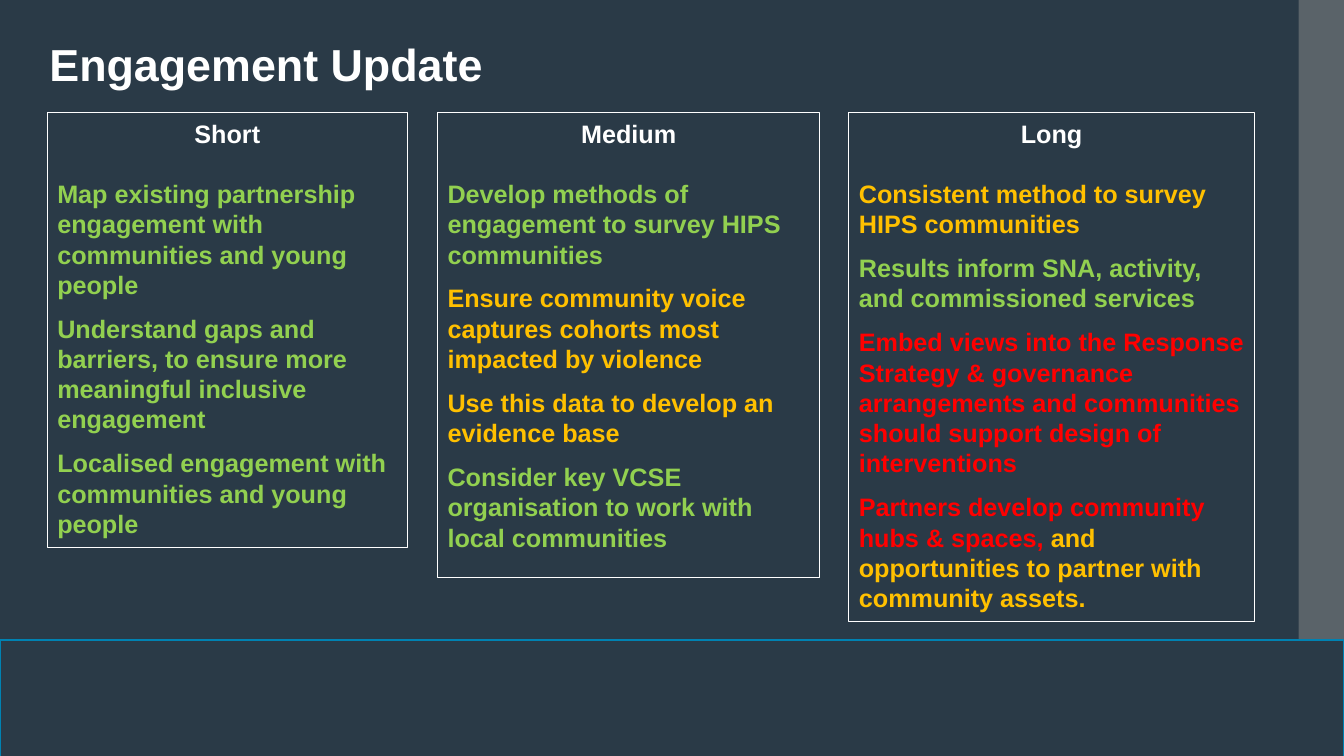
from dataclasses import dataclass

from lxml import etree
from pptx import Presentation
from pptx.dml.color import RGBColor
from pptx.enum.shapes import MSO_SHAPE
from pptx.enum.text import MSO_ANCHOR, PP_ALIGN
from pptx.oxml.ns import qn
from pptx.util import Inches, Pt

RECT = MSO_SHAPE.RECTANGLE
TOP = MSO_ANCHOR.TOP
LEFT, CENTER = PP_ALIGN.LEFT, PP_ALIGN.CENTER

NAVY = RGBColor(0x2A, 0x3A, 0x47)
GREY = RGBColor(0x8B, 0x8C, 0x8C)
BLUE = RGBColor(0x00, 0x82, 0xB2)
WHITE = RGBColor(0xFF, 0xFF, 0xFF)
GREEN = RGBColor(0x92, 0xD0, 0x50)
AMBER = RGBColor(0xFF, 0xC0, 0x00)
RED = RGBColor(0xFF, 0x00, 0x00)

FONT = "Arial"
BOX_TOP = 1.12


@dataclass(frozen=True)
class Run:
    text: str
    color: RGBColor


@dataclass(frozen=True)
class Stage:
    name: str
    left: float
    width: float
    height: float
    goals: list[list[Run]]


STAGES = [
    Stage("Short", 0.47, 3.57, 4.31, [
        [Run("Map existing partnership engagement with communities and young people", GREEN)],
        [Run("Understand gaps and barriers, to ensure more meaningful inclusive engagement", GREEN)],
        [Run("Localised engagement with communities and young people", GREEN)],
    ]),
    Stage("Medium", 4.34, 3.79, 4.61, [
        [Run("Develop methods of engagement to survey HIPS communities", GREEN)],
        [Run("Ensure community voice captures cohorts most impacted by violence", AMBER)],
        [Run("Use this data to develop an evidence base", AMBER)],
        [Run("Consider key VCSE organisation to work with local communities", GREEN)],
    ]),
    Stage("Long", 8.42, 4.02, 5.05, [
        [Run("Consistent method to survey HIPS communities", AMBER)],
        [Run("Results inform SNA, activity, and commissioned services", GREEN)],
        [Run("Embed views into the Response Strategy & governance arrangements "
             "and communities should support design of interventions", RED)],
        [Run("Partners develop community hubs & spaces, ", RED),
         Run("and opportunities to partner with community assets.", AMBER)],
    ]),
]


def write(para, runs: list[Run], *, size: float = 18, align=LEFT,
          before: float = 0) -> None:
    para.alignment = align
    para.space_before = Pt(before)
    para.space_after = Pt(0)
    para.line_spacing = 1.0
    for item in runs:
        run = para.add_run()
        run.text = item.text
        font = run.font
        font.name, font.size, font.bold = FONT, Pt(size), True
        font.color.rgb = item.color


def add_rect(slide, left: float, top: float, width: float, height: float, *,
             fill: RGBColor | None = None, line: RGBColor | None = None,
             weight: float = 0.75):
    shape = slide.shapes.add_shape(
        RECT, Inches(left), Inches(top), Inches(width), Inches(height))
    shape.shadow.inherit = False
    if fill is None:
        shape.fill.background()
    else:
        shape.fill.solid()
        shape.fill.fore_color.rgb = fill
    if line is None:
        shape.line.fill.background()
    else:
        shape.line.color.rgb = line
        shape.line.width = Pt(weight)
    return shape


def add_frame(slide) -> None:
    """Draw the side strip and the band along the bottom."""
    strip = add_rect(slide, 12.88, 0, 0.46, 7.6, fill=GREY)
    color = strip.fill._xPr.find(qn("a:solidFill"))[0]
    etree.SubElement(color, qn("a:alpha"), val="50000")
    add_rect(slide, 0, 6.35, 13.33, 1.25, fill=NAVY, line=BLUE, weight=1.5)


def add_title(slide, text: str) -> None:
    title = slide.shapes.title
    title.left, title.top = Inches(0.39), Inches(0.32)
    title.width, title.height = Inches(12.15), Inches(0.8)
    frame = title.text_frame
    frame.vertical_anchor = TOP
    frame.margin_left, frame.margin_top = Inches(0.1), Inches(0.04)
    write(frame.paragraphs[0], [Run(text, WHITE)], size=32)


def add_stage(slide, stage: Stage) -> None:
    box = add_rect(slide, stage.left, BOX_TOP, stage.width, stage.height, line=WHITE)
    frame = box.text_frame
    frame.word_wrap = True
    frame.vertical_anchor = TOP
    write(frame.paragraphs[0], [Run(stage.name, WHITE)], align=CENTER)
    for i, goal in enumerate(stage.goals):
        write(frame.add_paragraph(), goal, before=9.8 if i else 21.6)


def main() -> None:
    deck = Presentation()
    deck.slide_width, deck.slide_height = Inches(13.33), Inches(7.5)
    slide = deck.slides.add_slide(deck.slide_layouts[5])
    slide.background.fill.solid()
    slide.background.fill.fore_color.rgb = NAVY
    add_frame(slide)
    add_title(slide, "Engagement Update")
    for stage in STAGES:
        add_stage(slide, stage)
    deck.save("out.pptx")


if __name__ == "__main__":
    main()
